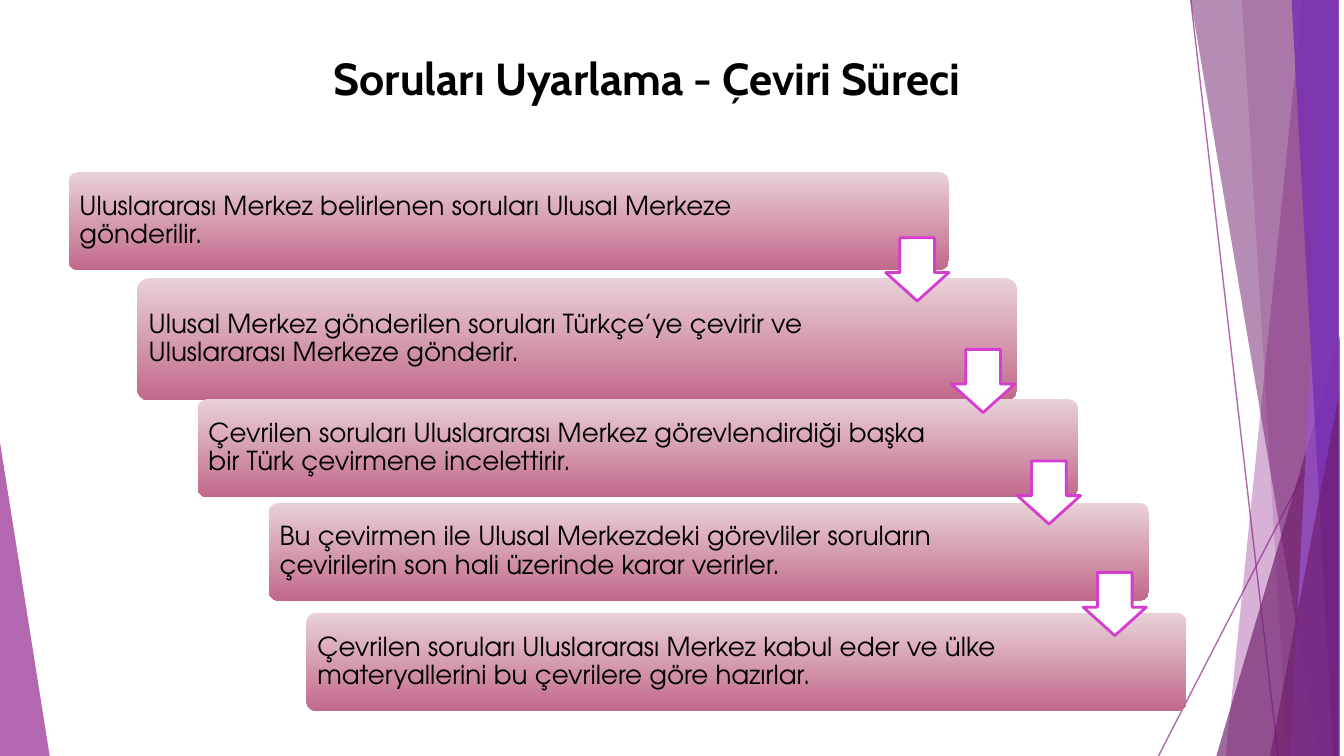
from dataclasses import dataclass

from lxml import etree
from pptx import Presentation
from pptx.dml.color import RGBColor
from pptx.enum import shapes, text
from pptx.oxml import ns
from pptx.util import Inches, Pt

PURPLE, PLUM, LILAC, VIOLET = "92278F", "6D1D6B", "9B57D3", "762EB1"
BLACK, WHITE, PINK = "000000", "FFFFFF", "D53DD0"
PAGE_WIDTH = 10
PAGE_HEIGHT = PAGE_WIDTH * 9 / 16
BAND_RIGHT = 9.96
UNITS_PER_INCH = 1000  # freeform points are rounded to whole units


@dataclass
class Ray:
    start: tuple[float, float]
    end: tuple[float, float]


@dataclass
class Wedge:
    left: float
    top: float
    width: float
    apex: float
    color: str
    opacity: int


@dataclass
class Band:
    """A full-height facet that reaches the right edge."""
    top_left: float
    bottom_left: float
    color: str
    opacity: int


@dataclass
class Step:
    left: float
    top: float
    height: float
    wording: str


DECORATION = [
    Wedge(0, 3.29, 0.37, 0, PURPLE, 70),
    Ray((8.86, 0), (9.51, PAGE_HEIGHT)),
    Ray((9.96, 3.02), (8.62, PAGE_HEIGHT)),
    Band(9.69, 9.12, PURPLE, 36),
    Band(9.24, 9.58, PURPLE, 20),
    Wedge(9.05, 2.5, 0.92, 1, PLUM, 66),
    Band(8.86, 9.81, PLUM, 50),
    Band(9.89, 9.6, LILAC, 70),
    Band(9.61, 9.92, VIOLET, 80),
    Wedge(9.45, 2.95, 0.51, 1, PLUM, 66),
]

STEPS = [
    Step(0.51, 1.28, 0.73, "Uluslararası Merkez belirlenen soruları Ulusal Merkeze gönderilir."),
    Step(1.02, 2.07, 0.91, "Ulusal Merkez gönderilen soruları Türkçe’ye çevirir ve Uluslararası Merkeze gönderir."),
    Step(1.47, 2.97, 0.73, "Çevrilen soruları Uluslararası Merkez görevlendirdiği başka bir Türk çevirmene incelettirir."),
    Step(2, 3.74, 0.73, "Bu çevirmen ile Ulusal Merkezdeki görevliler soruların çevirilerin son hali üzerinde karar verirler."),
    Step(2.28, 4.56, 0.73, "Çevrilen soruları Uluslararası Merkez kabul eder ve ülke materyallerini bu çevrilere göre hazırlar."),
]


def rgb(color: str) -> RGBColor:
    return RGBColor.from_string(color)


def set_opacity(shape, percent: int) -> None:
    for color in shape.element.iter(ns.qn("a:srgbClr")):
        etree.SubElement(color, ns.qn("a:alpha"), val=str(percent * 1000))


def paint(shape, color: str, opacity: int = 100) -> None:
    """Give a shape a flat fill with no outline or shadow."""
    shape.shadow.inherit = False
    shape.fill.solid()
    shape.fill.fore_color.rgb = rgb(color)
    shape.line.fill.background()
    if opacity < 100:
        set_opacity(shape, opacity)


def add_preset(page, kind, left: float, top: float, width: float, height: float):
    return page.shapes.add_shape(kind, Inches(left), Inches(top), Inches(width), Inches(height))


def draw_ray(page, ray: Ray) -> None:
    line = page.shapes.add_connector(
        shapes.MSO_CONNECTOR.STRAIGHT, *(Inches(value) for value in ray.start + ray.end))
    line.line.width = Pt(0.75)
    line.line.color.rgb = rgb(PURPLE)
    set_opacity(line, 70)
    etree.SubElement(line.element.spPr, ns.qn("a:effectLst"))


def draw_wedge(page, wedge: Wedge) -> None:
    triangle = add_preset(page, shapes.MSO_SHAPE.ISOSCELES_TRIANGLE, wedge.left, wedge.top,
                          wedge.width, PAGE_HEIGHT - wedge.top)
    triangle.adjustments[0] = wedge.apex
    paint(triangle, wedge.color, wedge.opacity)


def draw_band(page, band: Band) -> None:
    corners = [(band.top_left, 0), (BAND_RIGHT, 0),
               (BAND_RIGHT, PAGE_HEIGHT), (band.bottom_left, PAGE_HEIGHT)]
    points = [(x * UNITS_PER_INCH, y * UNITS_PER_INCH) for x, y in corners]
    outline = page.shapes.build_freeform(*points[0], scale=Inches(1) / UNITS_PER_INCH)
    outline.add_line_segments(points[1:])
    paint(outline.convert_to_shape(), band.color, band.opacity)


def write(shape, wording: str, font: str, size: int, align, bold: bool = False):
    frame = shape.text_frame
    frame.word_wrap = True
    frame.vertical_anchor = text.MSO_ANCHOR.MIDDLE
    para = frame.paragraphs[0]
    para.text = wording
    para.alignment = align
    para.font.name = font
    para.font.size = Pt(size)
    para.font.bold = bold
    para.font.color.rgb = rgb(BLACK)
    return para


def draw_title(page, wording: str) -> None:
    box = page.shapes.add_textbox(Inches(1.22), Inches(0.29), Inches(7.19), Inches(0.58))
    write(box, wording, "Cabin", 24, text.PP_ALIGN.CENTER, bold=True)


def draw_step(page, step: Step) -> None:
    box = add_preset(page, shapes.MSO_SHAPE.ROUNDED_RECTANGLE,
                     step.left, step.top, 6.55, step.height)
    box.adjustments[0] = 0.1
    box.shadow.inherit = False
    box.line.fill.background()
    box.fill.gradient()
    box.fill.gradient_angle = 270
    for stop, color in zip(box.fill.gradient_stops, ("E9D1D8", "C2698B")):
        stop.color.rgb = rgb(color)
    frame = box.text_frame
    frame.margin_left = Inches(0.06)
    frame.margin_right = Inches(1.05)  # keeps the words clear of the arrows
    para = write(box, step.wording, "TeX Gyre Adventor", 14, text.PP_ALIGN.LEFT)
    para.line_spacing = 0.9


def draw_arrow(page, left: float, top: float) -> None:
    arrow = add_preset(page, shapes.MSO_SHAPE.DOWN_ARROW, left, top, 0.47, 0.47)
    arrow.adjustments[0] = 0.55
    arrow.adjustments[1] = 0.45
    paint(arrow, WHITE)
    arrow.line.color.rgb = rgb(PINK)
    arrow.line.width = Pt(1.5)


def main() -> None:
    deck = Presentation()
    deck.slide_width, deck.slide_height = Inches(PAGE_WIDTH), Inches(PAGE_HEIGHT)
    page = deck.slides.add_slide(deck.slide_layouts[6])

    painters = {Ray: draw_ray, Wedge: draw_wedge, Band: draw_band}
    for item in DECORATION:
        painters[type(item)](page, item)
    draw_title(page, "Soruları Uyarlama - Çeviri Süreci")
    for step in STEPS:
        draw_step(page, step)
    for index in range(len(STEPS) - 1):
        draw_arrow(page, 6.59 + 0.49 * index, 1.77 + 0.83 * index)

    deck.save("out.pptx")


if __name__ == "__main__":
    main()
